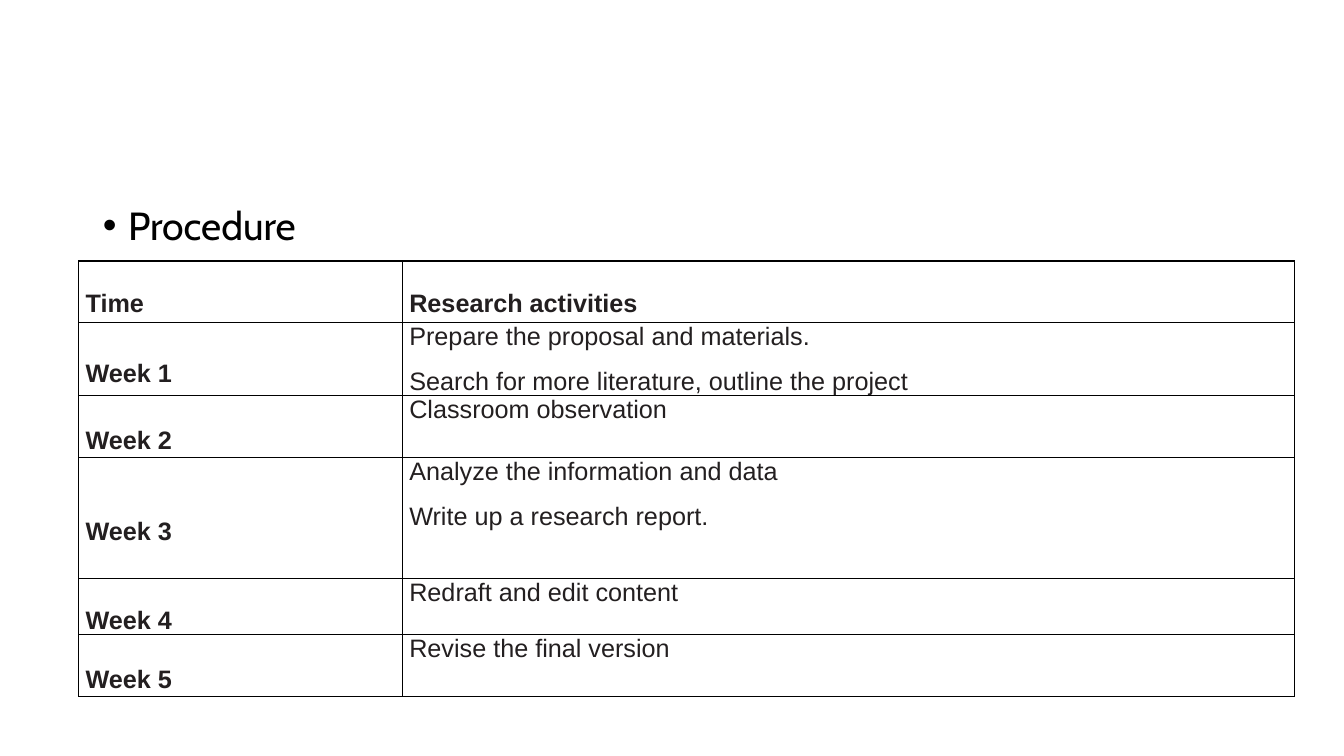
from lxml import etree
from pptx import Presentation
from pptx.dml.color import RGBColor
from pptx.enum.text import MSO_ANCHOR
from pptx.oxml.ns import qn
from pptx.util import Pt

PX = 9144  # EMU per px, 100 px to the inch
BLACK = RGBColor(0x00, 0x00, 0x00)
WHITE = RGBColor(0xFF, 0xFF, 0xFF)
TEXT = RGBColor(0x23, 0x1F, 0x20)
TOP, MIDDLE = MSO_ANCHOR.TOP, MSO_ANCHOR.MIDDLE

COLUMN_WIDTHS = [321, 885]
ROW_HEIGHTS = [61, 68, 61, 120, 52, 61]
SCHEDULE = [
    ("Time", ["Research activities"]),
    ("Week 1", ["Prepare the proposal and materials.",
                "Search for more literature, outline the project"]),
    ("Week 2", ["Classroom observation"]),
    ("Week 3", ["Analyze the information and data", "Write up a research report."]),
    ("Week 4", ["Redraft and edit content"]),
    ("Week 5", ["Revise the final version"]),
]


def add_run(paragraph, text, font_name, size, color, bold=False):
    run = paragraph.add_run()
    run.text = text
    run.font.name = font_name
    run.font.size = Pt(size)
    run.font.bold = bold
    run.font.color.rgb = color


def add_borders(cell):
    properties = cell._tc.get_or_add_tcPr()
    for side in ("a:lnL", "a:lnR", "a:lnT", "a:lnB"):
        line = etree.SubElement(properties, qn(side), w=str(Pt(1)))
        fill = etree.SubElement(line, qn("a:solidFill"))
        etree.SubElement(fill, qn("a:srgbClr"), val=str(BLACK))


presentation = Presentation()
presentation.slide_width = 1333 * PX
presentation.slide_height = 750 * PX
slide = presentation.slides.add_slide(presentation.slide_layouts[1])
title = slide.shapes.title
title._element.getparent().remove(title._element)

# Bulleted heading
body = slide.placeholders[1]
body.left, body.top, body.width, body.height = 92 * PX, 200 * PX, 1150 * PX, 476 * PX
paragraph = body.text_frame.paragraphs[0]
properties = paragraph._p.get_or_add_pPr()
properties.set("marL", str(25 * PX))
properties.set("indent", str(-25 * PX))
etree.SubElement(properties, qn("a:buFont"), typeface="Arial")
etree.SubElement(properties, qn("a:buChar"), char="•")
paragraph.line_spacing = 0.9
paragraph.space_before = Pt(0)
add_run(paragraph, "Procedure", "Cabin", 28, BLACK)

# Schedule table
table = slide.shapes.add_table(
    len(SCHEDULE), len(COLUMN_WIDTHS), 78 * PX, 259 * PX,
    sum(COLUMN_WIDTHS) * PX, sum(ROW_HEIGHTS) * PX).table
table.first_row = False
table.horz_banding = False
for column, width in zip(table.columns, COLUMN_WIDTHS):
    column.width = width * PX
for row, height in zip(table.rows, ROW_HEIGHTS):
    row.height = height * PX

for row_index, (time, activities) in enumerate(SCHEDULE):
    is_header = row_index == 0
    for column_index, lines in enumerate([[time], activities]):
        is_label = is_header or column_index == 0
        cell = table.cell(row_index, column_index)
        cell.margin_left = cell.margin_right = 7 * PX
        cell.margin_top = cell.margin_bottom = 0
        cell.vertical_anchor = MIDDLE if is_label and not is_header else TOP
        add_borders(cell)
        cell.fill.solid()
        cell.fill.fore_color.rgb = WHITE
        frame = cell.text_frame
        for line_index, text in enumerate(lines):
            paragraph = frame.add_paragraph() if line_index else frame.paragraphs[0]
            paragraph.line_spacing = 2.0 if is_label else 1.0
            paragraph.space_before = Pt(6 if line_index else 0)
            paragraph.space_after = Pt(6)
            add_run(paragraph, text, "Arial", 18, TEXT, is_label)

presentation.save("out.pptx")
